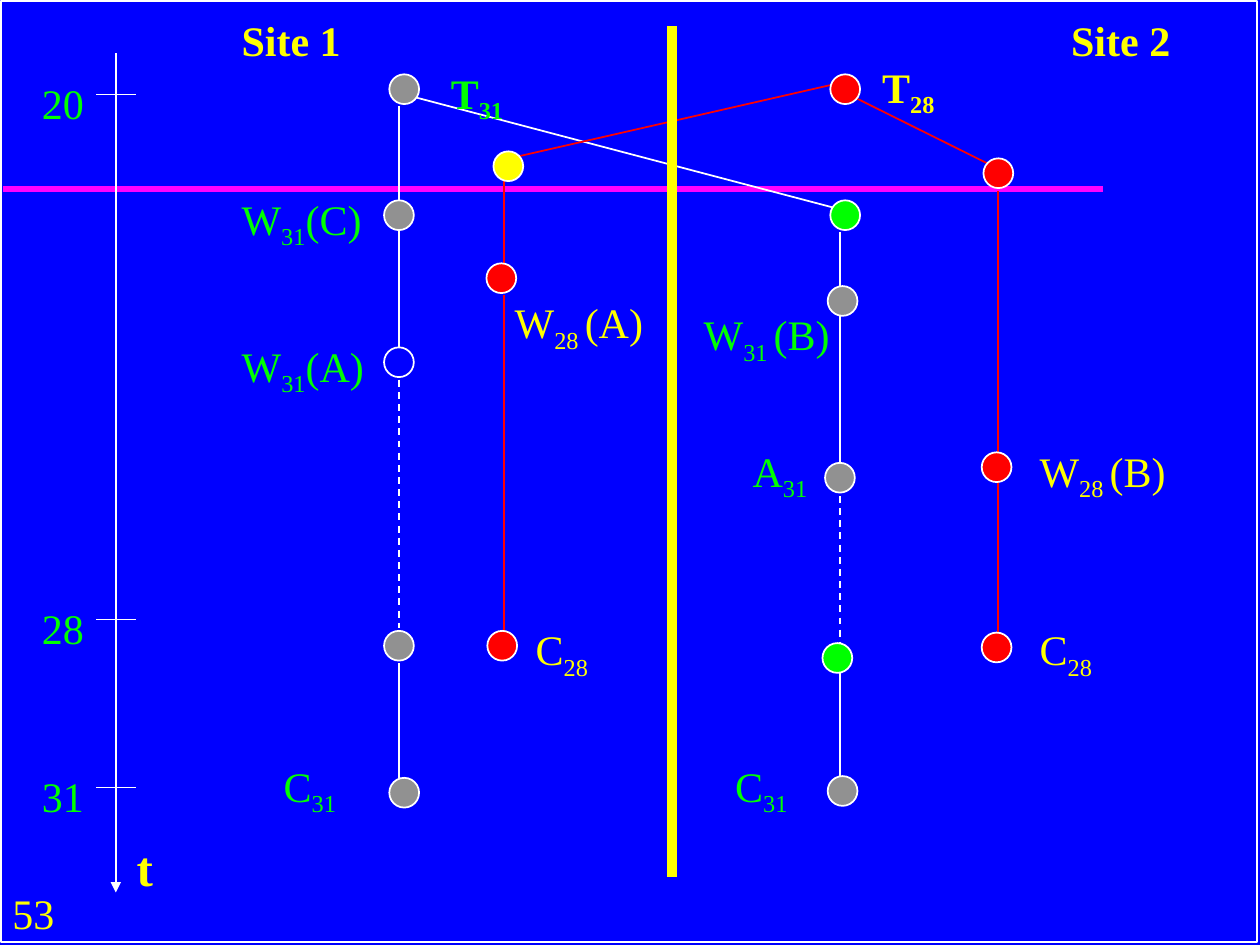
from dataclasses import dataclass

from lxml import etree
from pptx import Presentation
from pptx.dml.color import RGBColor
from pptx.enum.dml import MSO_LINE
from pptx.enum.shapes import MSO_CONNECTOR, MSO_SHAPE
from pptx.enum.text import MSO_AUTO_SIZE
from pptx.oxml.ns import qn
from pptx.util import Pt

STRAIGHT = MSO_CONNECTOR.STRAIGHT
OVAL = MSO_SHAPE.OVAL
RECTANGLE = MSO_SHAPE.RECTANGLE
DASH = MSO_LINE.DASH
FIT_SHAPE = MSO_AUTO_SIZE.SHAPE_TO_FIT_TEXT

FONT = "Times New Roman"
NODE_SIZE = 17
COLORS = {
    "blue": "0000FF", "white": "FFFFFF", "red": "FF0000", "green": "00FF00",
    "yellow": "FFFF00", "magenta": "FF00FF", "gray": "919191",
}


@dataclass
class Line:
    x1: float
    y1: float
    x2: float
    y2: float
    color: str = "white"
    width: float = 1
    dashed: bool = False
    arrow: bool = False


@dataclass
class Node:
    x: float
    y: float
    color: str


@dataclass
class Label:
    text: str
    left: float
    top: float
    width: float
    color: str
    bold: bool = False
    size: float = 24


FRAME_LINE = Line(2, 108, 630, 108, "magenta", 4)
DIVIDER = Line(384, 15, 384, 501, "yellow", 6)
TIME_AXIS = Line(66.2, 30.5, 66.2, 510, arrow=True)
TIME_MARKS = {"20": 54, "28": 354, "31": 450}

LINKS = [
    # T31 and its branches
    Line(235, 55, 479.5, 119.5),
    Line(228, 60.5, 228, 209.5),
    Line(228, 217, 228, 359, dashed=True),
    Line(228, 379, 228, 449),
    Line(480, 132.5, 480, 269),
    Line(480, 276.5, 480, 377, dashed=True),
    Line(480, 379, 480, 456),
    # T28 and its branches
    Line(487, 55, 569.5, 96, "red"),
    Line(289, 91, 479.5, 47.5, "red"),
    Line(288, 92, 288, 155.5, "red"),
    Line(288, 168.5, 288, 366, "red"),
    Line(570.2, 109, 570.2, 269, "red"),
    Line(570.2, 271, 570.2, 371.5, "red"),
]

NODES = [
    # T31 at site 1
    Node(231, 51, "gray"), Node(228, 123, "gray"), Node(228, 207, "blue"),
    Node(228, 369, "gray"), Node(231, 453, "gray"),
    # T28 at site 1
    Node(290.5, 95, "yellow"), Node(286.5, 159, "red"), Node(287, 369, "red"),
    # T31 at site 2
    Node(483, 123, "green"), Node(481.5, 172, "gray"), Node(480, 273, "gray"),
    Node(478.5, 376, "green"), Node(481.5, 452, "gray"),
    # T28 at site 2
    Node(483, 51, "red"), Node(570.5, 99, "red"),
    Node(569.5, 267, "red"), Node(569.5, 370, "red"),
]

# Text between underscores is subscript.
LABELS = [
    Label("53", 0, 503.5, 42.5, "yellow"),
    Label("Site 1", 131, 5, 76, "yellow", True),
    Label("Site 2", 605, 5, 76, "yellow", True),
    Label("T_31", 250.5, 35, 48, "green", True),
    Label("T_28", 497, 31.5, 48, "yellow", True),
    Label("W_31_(C)", 131, 107, 88, "green"),
    Label("W_31_(A)", 131, 191, 90, "green"),
    Label("W_28 _(A)", 287, 166, 93, "yellow"),
    Label("W_31 _(B)", 395, 173, 92, "green"),
    Label("W_28 _(B)", 587, 251, 92, "yellow"),
    Label("A_31", 423, 251, 54, "green"),
    Label("C_28", 299, 353, 48, "yellow"),
    Label("C_28", 587, 353, 48, "yellow"),
    Label("C_31", 155, 431, 48, "green"),
    Label("C_31", 413, 431, 48, "green"),
    Label("t", 71, 475, 26, "yellow", True, 28),
]


def rgb(name: str) -> RGBColor:
    return RGBColor.from_string(COLORS[name])


def draw_line(page, line: Line) -> None:
    ends = [Pt(value) for value in (line.x1, line.y1, line.x2, line.y2)]
    connector = page.shapes.add_connector(STRAIGHT, *ends)
    connector.line.color.rgb = rgb(line.color)
    connector.line.width = Pt(line.width)
    if line.dashed:
        connector.line.dash_style = DASH
    properties = connector._element.spPr
    if line.arrow:
        outline = properties.find(qn("a:ln"))
        etree.SubElement(outline, qn("a:tailEnd"), type="triangle")
    etree.SubElement(properties, qn("a:effectLst"))


def draw_shape(page, kind, left: float, top: float, width: float, height: float,
               fill: str = "") -> None:
    """Draw a white-edged shape; an empty fill name leaves it hollow."""
    shape = page.shapes.add_shape(kind, Pt(left), Pt(top), Pt(width), Pt(height))
    shape.shadow.inherit = False
    shape.line.color.rgb = rgb("white")
    shape.line.width = Pt(1)
    if fill:
        shape.fill.solid()
        shape.fill.fore_color.rgb = rgb(fill)
    else:
        shape.fill.background()


def draw_node(page, node: Node) -> None:
    radius = NODE_SIZE / 2
    draw_shape(page, OVAL, node.x - radius, node.y - radius,
               NODE_SIZE, NODE_SIZE, node.color)


def add_span(para, text: str, *, color: str, size: float, bold: bool,
             subscript: bool) -> None:
    span = para.add_run()
    span.text = text
    span.font.name = FONT
    span.font.size = Pt(size)
    span.font.bold = bold
    span.font.color.rgb = rgb(color)
    if subscript:
        span._r.get_or_add_rPr().set("baseline", "-25000")


def draw_label(page, label: Label) -> None:
    box = page.shapes.add_textbox(Pt(label.left), Pt(label.top),
                                  Pt(label.width), Pt(label.size * 1.2 + 7.2))
    box.text_frame.word_wrap = True
    box.text_frame.auto_size = FIT_SHAPE
    para = box.text_frame.paragraphs[0]
    for index, text in enumerate(label.text.split("_")):
        add_span(para, text, color=label.color, size=label.size,
                 bold=label.bold, subscript=index % 2 == 1)


def main() -> None:
    deck = Presentation()
    deck.slide_width, deck.slide_height = Pt(720), Pt(540)
    page = deck.slides.add_slide(deck.slide_layouts[6])
    page.background.fill.solid()
    page.background.fill.fore_color.rgb = rgb("blue")

    draw_line(page, FRAME_LINE)
    draw_shape(page, RECTANGLE, 0.7, 0.7, 717.8, 537.8)
    draw_line(page, TIME_AXIS)
    for text, y in TIME_MARKS.items():
        draw_line(page, Line(55, y, 78, y))
        draw_label(page, Label(text, 16.8, y - 13, 43, "green"))
    for link in LINKS:
        draw_line(page, link)
    for node in NODES:
        draw_node(page, node)
    draw_line(page, DIVIDER)
    for label in LABELS:
        draw_label(page, label)
    deck.save("out.pptx")


if __name__ == "__main__":
    main()
